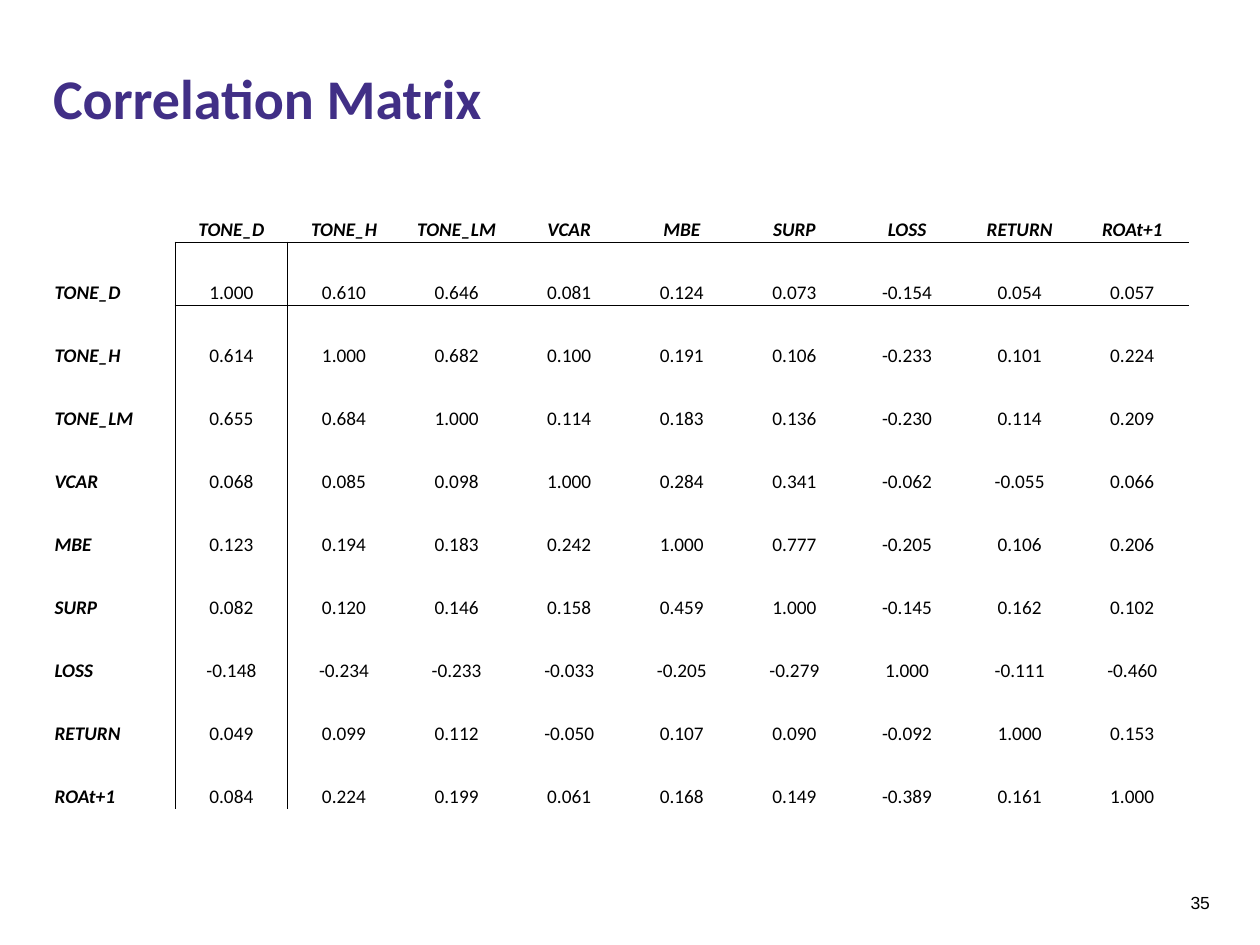
"""Build a slide with a correlation matrix of tone and earnings measures."""
import lxml.etree
import pptx
import pptx.dml.color
import pptx.enum.text
import pptx.oxml.ns
import pptx.util

Cm, Pt = pptx.util.Cm, pptx.util.Pt
ALIGN, ANCHOR = pptx.enum.text.PP_ALIGN, pptx.enum.text.MSO_ANCHOR
qn = pptx.oxml.ns.qn

TITLE = "Correlation Matrix"
PAGE = "35"
NAMES = ["TONE_D", "TONE_H", "TONE_LM", "VCAR", "MBE", "SURP", "LOSS", "RETURN", "ROAt+1"]
VALUES = [
    ["1.000", "0.610", "0.646", "0.081", "0.124", "0.073", "-0.154", "0.054", "0.057"],
    ["0.614", "1.000", "0.682", "0.100", "0.191", "0.106", "-0.233", "0.101", "0.224"],
    ["0.655", "0.684", "1.000", "0.114", "0.183", "0.136", "-0.230", "0.114", "0.209"],
    ["0.068", "0.085", "0.098", "1.000", "0.284", "0.341", "-0.062", "-0.055", "0.066"],
    ["0.123", "0.194", "0.183", "0.242", "1.000", "0.777", "-0.205", "0.106", "0.206"],
    ["0.082", "0.120", "0.146", "0.158", "0.459", "1.000", "-0.145", "0.162", "0.102"],
    ["-0.148", "-0.234", "-0.233", "-0.033", "-0.205", "-0.279", "1.000", "-0.111", "-0.460"],
    ["0.049", "0.099", "0.112", "-0.050", "0.107", "0.090", "-0.092", "1.000", "0.153"],
    ["0.084", "0.224", "0.199", "0.061", "0.168", "0.149", "-0.389", "0.161", "1.000"],
]
BLACK, PURPLE = "000000", "412F86"
PLAIN = "{2D5ABB26-0587-4C30-8999-92F81FD0307C}"
LEFT, HEAD, WIDE, HIGH = Cm(1.07), Cm(2.46), Cm(2.27), Cm(1.27)


def tint(code):
    return pptx.dml.color.RGBColor.from_string(code)


def write(frame, text, size, face="Calibri", color=BLACK, bold=False, slant=False, align=ALIGN.LEFT):
    para = frame.paragraphs[0]
    para.alignment = align
    run = para.add_run()
    run.text = text
    font = run.font
    font.name, font.size, font.bold, font.italic = face, Pt(size), bold, slant
    font.color.rgb = tint(color)


def inset(frame):
    frame.margin_left = frame.margin_right = frame.margin_top = frame.margin_bottom = 0
    frame.word_wrap = True
    frame.vertical_anchor = ANCHOR.TOP


def rule(cell, sides):
    props = cell._tc.get_or_add_tcPr()
    for spot, side in enumerate(sides):
        line = lxml.etree.Element(qn("a:ln" + side), w=str(Pt(0.5)))
        fill = lxml.etree.SubElement(line, qn("a:solidFill"))
        lxml.etree.SubElement(fill, qn("a:srgbClr"), val=BLACK)
        props.insert(spot, line)


def borders(row, col):
    sides = ""
    if row and col == 1:
        sides += "L"
    if row and col == 0:
        sides += "R"
    if row == 1 and col:
        sides += "T"
    if row == 0 and col:
        sides += "B"
    return sides


def matrix(slide):
    rows = [[""] + NAMES] + [[name] + line for name, line in zip(NAMES, VALUES)]
    count = len(rows)
    frame = slide.shapes.add_table(
        count, count, LEFT, Cm(3.61), HEAD + WIDE * len(NAMES), HIGH * count)
    table = frame.table
    table.first_row = table.horz_banding = False
    table._tbl.tblPr[0].text = PLAIN
    for col in range(count):
        table.columns[col].width = WIDE if col else HEAD
    for row, line in enumerate(rows):
        table.rows[row].height = HIGH
        for col, text in enumerate(line):
            cell = table.cell(row, col)
            cell.margin_left = cell.margin_right = cell.margin_top = Cm(0.03)
            cell.margin_bottom = 0
            cell.vertical_anchor = ANCHOR.BOTTOM
            cell.fill.background()
            rule(cell, borders(row, col))
            if text:
                label = row == 0 or col == 0
                write(cell.text_frame, text, 11, bold=label, slant=label,
                      align=ALIGN.CENTER if col else ALIGN.LEFT)


def main():
    deck = pptx.Presentation()
    deck.slide_width, deck.slide_height = Cm(25.4), Cm(19.05)
    slide = deck.slides.add_slide(deck.slide_layouts[5])

    title = slide.shapes.title
    title.left, title.top, title.width, title.height = LEFT, Cm(1.27), Cm(23.22), Cm(2.54)
    inset(title.text_frame)
    write(title.text_frame, TITLE, 32, color=PURPLE, bold=True)

    matrix(slide)

    page = slide.shapes.add_textbox(Cm(23.5), Cm(17.98), Cm(0.89), Cm(0.43))
    inset(page.text_frame)
    write(page.text_frame, PAGE, 10, face="Arial", align=ALIGN.RIGHT)

    deck.save("out.pptx")


if __name__ == "__main__":
    main()
